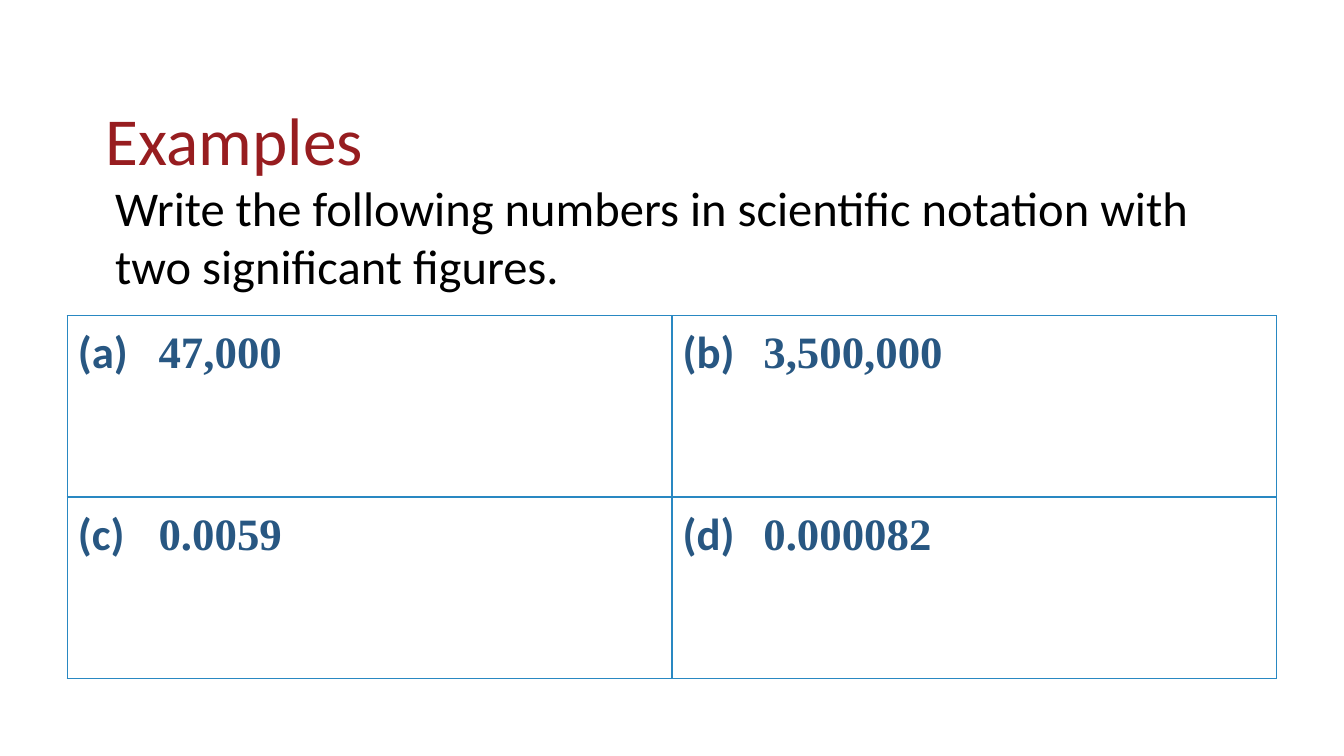
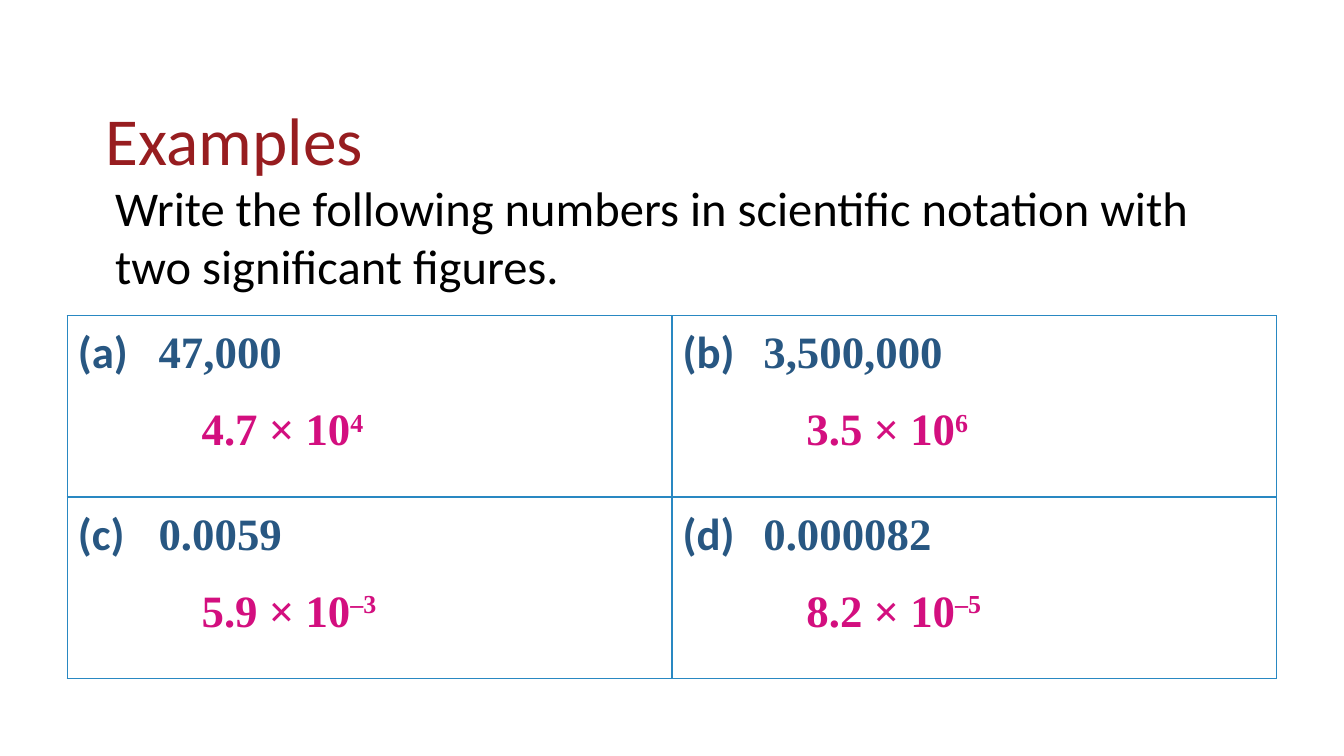
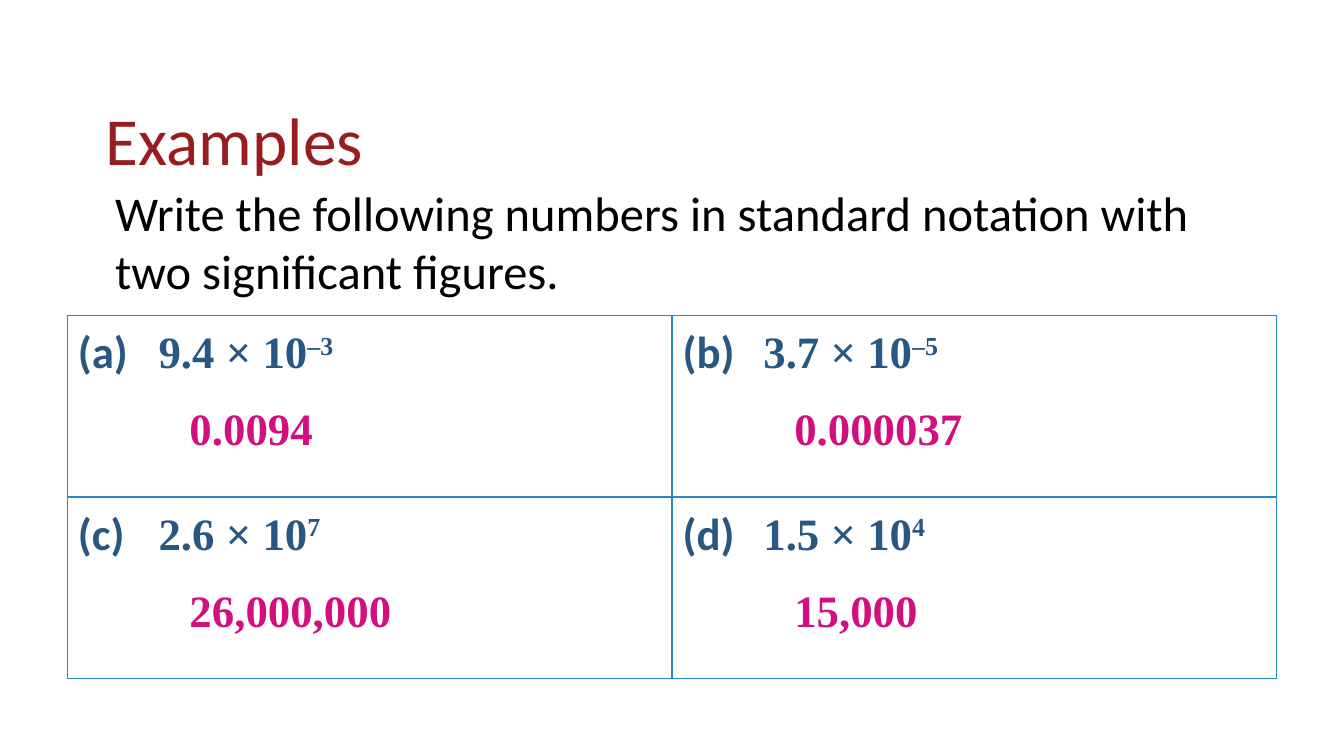
from dataclasses import dataclass

from lxml import etree
from pptx import Presentation
from pptx.dml.color import RGBColor
from pptx.enum.text import MSO_ANCHOR, MSO_AUTO_SIZE, PP_ALIGN
from pptx.oxml.ns import qn
from pptx.slide import Slide
from pptx.table import _Cell
from pptx.text.text import _Paragraph
from pptx.util import Inches, Pt

BOTTOM = MSO_ANCHOR.BOTTOM
TOP = MSO_ANCHOR.TOP
NO_FIT = MSO_AUTO_SIZE.NONE
LEFT = PP_ALIGN.LEFT

SLIDE_WIDTH = Inches(10)
SLIDE_HEIGHT = SLIDE_WIDTH * 9 // 16
TITLE_ONLY = 5
COLUMNS = 2
SANS = "Calibri"
SERIF = "Times New Roman"
COLORS = {
    "title": "971D20",
    "prompt": "000000",
    "question": "285782",
    "answer": "D30F7F",
    "border": "2988C2",
}
BORDER_WIDTH = Pt(0.75)
CELL_MARGIN = Inches(0.08)
NUMBER_TAB = Inches(0.6)


@dataclass(frozen=True)
class PercentFrame:
    left: float
    top: float
    width: float
    height: float

    def lengths(self) -> tuple[int, int, int, int]:
        return (
            round(SLIDE_WIDTH * self.left / 100),
            round(SLIDE_HEIGHT * self.top / 100),
            round(SLIDE_WIDTH * self.width / 100),
            round(SLIDE_HEIGHT * self.height / 100),
        )


@dataclass(frozen=True)
class Exercise:
    question: str
    answer: str


@dataclass(frozen=True)
class ExampleSlide:
    notation: str
    prompt_frame: PercentFrame
    exercises: tuple[Exercise, ...]
    show_answers: bool
    answer_indent: float


TITLE_FRAME = PercentFrame(6.88, 5.33, 86.25, 19.38)
PROMPT_FRAME = PercentFrame(6.88, 22.65, 86.25, 16.53)
TALL_PROMPT_FRAME = PercentFrame(6.88, 23.29, 86.25, 63.47)
TABLE_FRAME = PercentFrame(5, 41.75, 90, 48)

TO_SCIENTIFIC = (
    Exercise("47,000", "4.7 × 10^4"),
    Exercise("3,500,000", "3.5 × 10^6"),
    Exercise("0.0059", "5.9 × 10^–3"),
    Exercise("0.000082", "8.2 × 10^–5"),
)
TO_STANDARD = (
    Exercise("9.4 × 10^–3", "0.0094"),
    Exercise("3.7 × 10^–5", "0.000037"),
    Exercise("2.6 × 10^7", "26,000,000"),
    Exercise("1.5 × 10^4", "15,000"),
)
EXAMPLES = (
    ExampleSlide("scientific", PROMPT_FRAME, TO_SCIENTIFIC, False, 0.92),
    ExampleSlide("scientific", PROMPT_FRAME, TO_SCIENTIFIC, True, 0.92),
    ExampleSlide("standard", TALL_PROMPT_FRAME, TO_STANDARD, True, 0.83),
)


def style_paragraph(para: _Paragraph, size: float, name: str, color: str, bold: bool = False) -> None:
    para.alignment = LEFT
    para.font.size = Pt(size)
    para.font.name = name
    para.font.bold = bold
    para.font.color.rgb = RGBColor.from_string(COLORS[color])


def add_span(para: _Paragraph, text: str, name: str, superscript: bool = False) -> None:
    span = para.add_run()
    span.text = text
    span.font.name = name
    if superscript:
        span._r.get_or_add_rPr().set("baseline", "30000")


def add_number(para: _Paragraph, number: str) -> None:
    base, _, exponent = number.partition("^")
    add_span(para, base, SERIF)
    if exponent:
        add_span(para, exponent, SERIF, superscript=True)


def set_indent(para: _Paragraph, inches: float) -> None:
    para._p.get_or_add_pPr().set("marL", str(Inches(inches)))


def set_tab(para: _Paragraph, position: int) -> None:
    tabs = etree.SubElement(para._p.get_or_add_pPr(), qn("a:tabLst"))
    etree.SubElement(tabs, qn("a:tab"), pos=str(position), algn="l")


def set_borders(cell: _Cell) -> None:
    properties = cell._tc.get_or_add_tcPr()
    for index, side in enumerate(("lnL", "lnR", "lnT", "lnB")):
        line = etree.Element(qn(f"a:{side}"), w=str(BORDER_WIDTH))
        fill = etree.SubElement(line, qn("a:solidFill"))
        etree.SubElement(fill, qn("a:srgbClr"), val=COLORS["border"])
        properties.insert(index, line)


def add_title(page: Slide) -> None:
    title = page.shapes.title
    title.left, title.top, title.width, title.height = TITLE_FRAME.lengths()
    frame = title.text_frame
    frame.text = "Examples"
    frame.auto_size = NO_FIT
    frame.vertical_anchor = BOTTOM
    para = frame.paragraphs[0]
    para.line_spacing = 0.9
    style_paragraph(para, 36, SANS, "title")


def add_prompt(page: Slide, example: ExampleSlide) -> None:
    box = page.shapes.add_textbox(*example.prompt_frame.lengths())
    frame = box.text_frame
    frame.word_wrap = True
    frame.vertical_anchor = TOP
    frame.text = (
        f"Write the following numbers in {example.notation} notation "
        "with two significant figures."
    )
    para = frame.paragraphs[0]
    para.space_before = Pt(5.2)
    set_indent(para, 0.07)
    style_paragraph(para, 26, SANS, "prompt")


def fill_cell(cell: _Cell, letter: str, exercise: Exercise, example: ExampleSlide) -> None:
    cell.fill.background()
    set_borders(cell)
    cell.margin_left = cell.margin_right = CELL_MARGIN
    cell.margin_top = cell.margin_bottom = CELL_MARGIN
    question = cell.text_frame.paragraphs[0]
    set_tab(question, NUMBER_TAB)
    style_paragraph(question, 24, SERIF, "question", bold=True)
    add_span(question, f"({letter})\t", SANS)
    add_number(question, exercise.question)
    if example.show_answers:
        answer = cell.text_frame.add_paragraph()
        answer.line_spacing = 1.5
        set_indent(answer, example.answer_indent)
        style_paragraph(answer, 24, SERIF, "answer", bold=True)
        add_number(answer, exercise.answer)


def add_exercises(page: Slide, example: ExampleSlide) -> None:
    rows = len(example.exercises) // COLUMNS
    table = page.shapes.add_table(rows, COLUMNS, *TABLE_FRAME.lengths()).table
    table.first_row = False
    table.horz_banding = False
    for index, (letter, exercise) in enumerate(zip("abcd", example.exercises)):
        fill_cell(table.cell(*divmod(index, COLUMNS)), letter, exercise, example)


def main() -> None:
    deck = Presentation()
    deck.slide_width = SLIDE_WIDTH
    deck.slide_height = SLIDE_HEIGHT
    for example in EXAMPLES:
        page = deck.slides.add_slide(deck.slide_layouts[TITLE_ONLY])
        add_title(page)
        add_prompt(page, example)
        add_exercises(page, example)
    deck.save("out.pptx")


if __name__ == "__main__":
    main()
